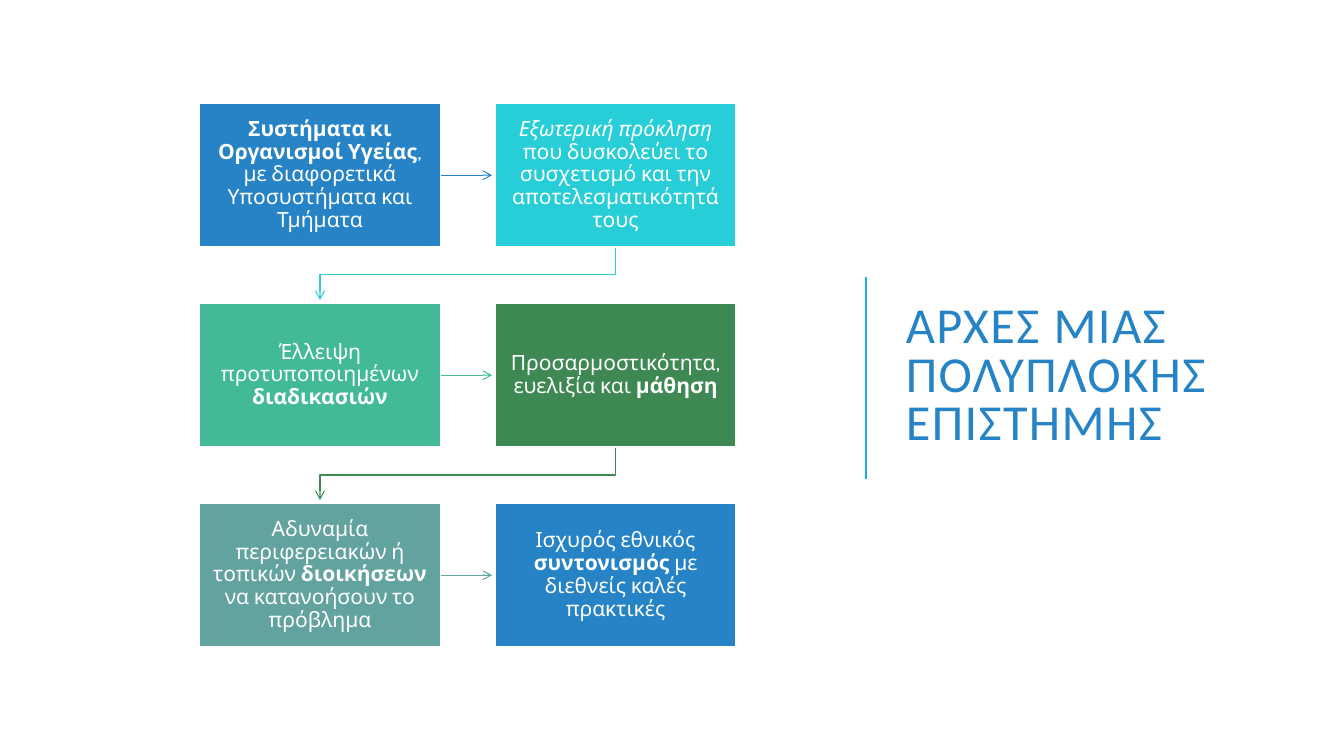
from lxml.etree import SubElement
from pptx import Presentation
from pptx.dml.color import RGBColor
from pptx.enum.shapes import MSO_CONNECTOR, MSO_SHAPE
from pptx.enum.text import MSO_ANCHOR, PP_ALIGN
from pptx.oxml.ns import qn
from pptx.util import Cm, Pt

WHITE = RGBColor(0xFF, 0xFF, 0xFF)
BLUE = RGBColor(0x26, 0x83, 0xC6)
CYAN = RGBColor(0x27, 0xCE, 0xD7)
MINT = RGBColor(0x42, 0xBA, 0x97)
GREEN = RGBColor(0x3E, 0x88, 0x53)
TEAL = RGBColor(0x62, 0xA3, 0x9F)
SKY = RGBColor(0x1C, 0xAD, 0xE4)

# Grid of boxes: first corner, box size and pitch, in cm
LEFT, TOP = 5.03, 2.6
WIDTH, HEIGHT = 6.07, 3.63
STEP_X, STEP_Y = 7.45, 5.04

# Each step: fill, then text runs with their style ("b", "i" or plain)
STEPS = [
    (BLUE, [("Συστήματα κι Οργανισμοί Υγείας", "b"),
            (", με διαφορετικά Υποσυστήματα και Τμήματα", "")]),
    (CYAN, [("Εξωτερική πρόκληση ", "i"),
            ("που δυσκολεύει το συσχετισμό και την αποτελεσματικότητά τους", "")]),
    (MINT, [("Έλλειψη προτυποποιημένων ", ""), ("διαδικασιών", "b")]),
    (GREEN, [("Προσαρμοστικότητα, ευελιξία και ", ""), ("μάθηση", "b")]),
    (TEAL, [("Αδυναμία περιφερειακών ή τοπικών ", ""), ("διοικήσεων", "b"),
            (" να κατανοήσουν το πρόβλημα", "")]),
    (BLUE, [("Ισχυρός εθνικός ", ""), ("συντονισμός", "b"),
            (" με διεθνείς καλές πρακτικές", "")]),
]


def write(shape, runs, font, size, color, align, space, inset, track=0):
    frame = shape.text_frame
    frame.word_wrap = True
    frame.vertical_anchor = MSO_ANCHOR.MIDDLE
    frame.margin_left = frame.margin_right = Cm(inset)
    frame.margin_top = frame.margin_bottom = Cm(inset)
    para = frame.paragraphs[0]
    para.alignment = align
    para.line_spacing = space
    for text, style in runs:
        run = para.add_run()
        run.text = text
        run.font.name = font
        run.font.size = Pt(size)
        run.font.color.rgb = color
        run.font.bold = style == "b"
        run.font.italic = style == "i"
        if track:
            run.font._element.set("spc", str(track))


def stroke(shape, color, width, arrow=False):
    shape.line.color.rgb = color
    shape.line.width = Pt(width)
    if arrow:
        SubElement(shape.line._get_or_add_ln(), qn("a:tailEnd"), type="arrow")


deck = Presentation()
deck.slide_width, deck.slide_height = Cm(33.87), Cm(19.05)
slide = deck.slides.add_slide(deck.slide_layouts[6])
shapes = slide.shapes

# Title and the rule beside it
title = shapes.add_textbox(Cm(22.58), Cm(1.78), Cm(9.65), Cm(15.47))
write(title, [("ΑΡΧΕΣ ΜΙΑΣ ΠΟΛΥΠΛΟΚΗΣ ΕΠΙΣΤΗΜΗΣ", "")], font="Calibri", size=36,
      color=BLUE, align=PP_ALIGN.LEFT, space=0.8, inset=0.25, track=100)
rule = shapes.add_connector(MSO_CONNECTOR.STRAIGHT,
                            Cm(21.82), Cm(12.07), Cm(21.82), Cm(6.99))
SubElement(rule._element.spPr, qn("a:effectLst"))
stroke(rule, SKY, 1.5)

for i, (color, runs) in enumerate(STEPS):
    row, col = divmod(i, 2)
    x, y = LEFT + col * STEP_X, TOP + row * STEP_Y

    # Box
    box = shapes.add_shape(MSO_SHAPE.RECTANGLE, Cm(x), Cm(y), Cm(WIDTH), Cm(HEIGHT))
    box.shadow.inherit = False
    box.fill.solid()
    box.fill.fore_color.rgb = color
    stroke(box, WHITE, 1.25)
    write(box, runs, font="Cabin", size=15, color=WHITE,
          align=PP_ALIGN.CENTER, space=0.9, inset=0.3)

    # Arrow to the next box: across a row, or bent down to the next row
    if i == len(STEPS) - 1:
        continue
    if col == 0:
        mid = Cm(y + HEIGHT / 2)
        arrow = shapes.add_connector(MSO_CONNECTOR.STRAIGHT, Cm(x + WIDTH + 0.02), mid,
                                     Cm(x + STEP_X - 0.08), mid)
        SubElement(arrow._element.spPr, qn("a:effectLst"))
    else:
        start, end = Cm(x + WIDTH / 2), Cm(x - STEP_X + WIDTH / 2)
        low = y + HEIGHT
        turn = Cm(low + 0.7)
        pen = shapes.build_freeform(start, Cm(low + 0.02))
        pen.add_line_segments([(start, turn), (end, turn),
                               (end, Cm(y + STEP_Y - 0.08))], close=False)
        arrow = pen.convert_to_shape()
        arrow.shadow.inherit = False
        arrow.fill.background()
    stroke(arrow, color, 0.75, arrow=True)

deck.save("out.pptx")
